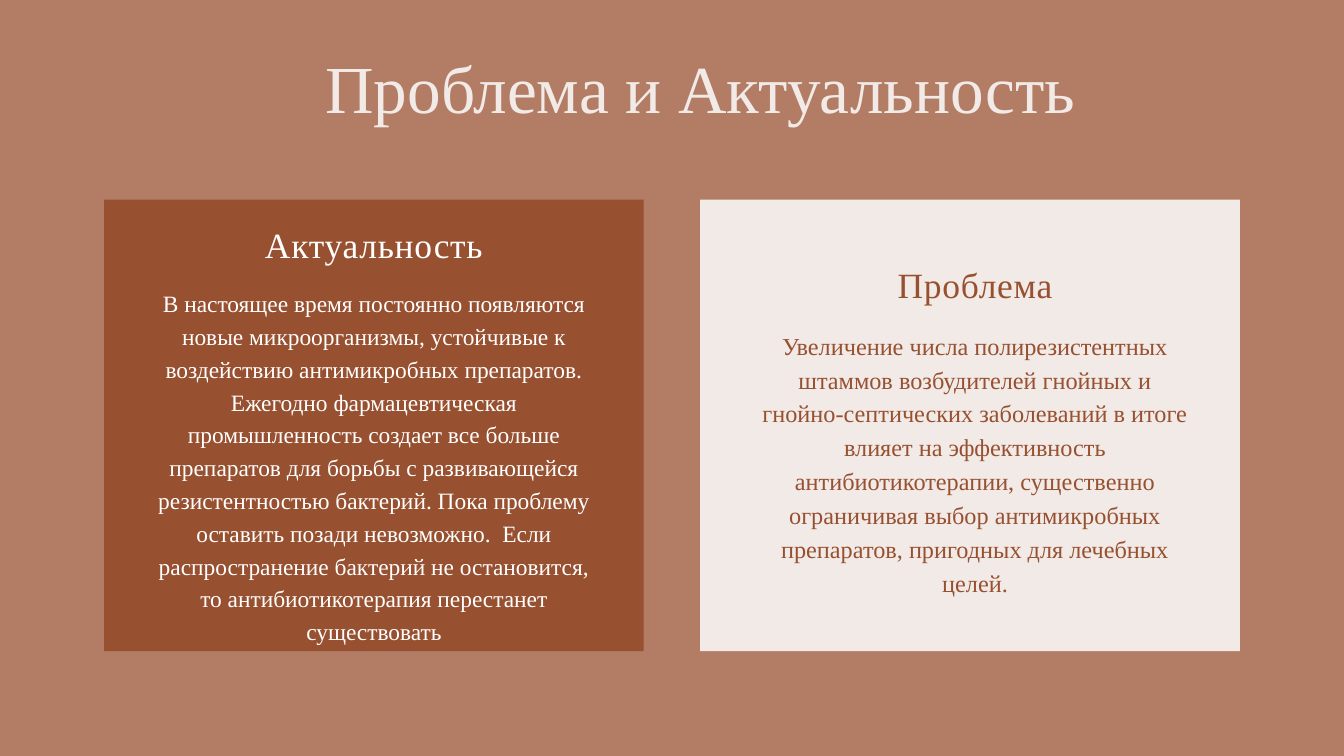
from dataclasses import dataclass

from pptx import Presentation
from pptx.dml.color import RGBColor
from pptx.enum.shapes import MSO_SHAPE as Shape
from pptx.enum.text import MSO_ANCHOR as Anchor, MSO_AUTO_SIZE as AutoSize, PP_ALIGN as Align
from pptx.slide import Slide
from pptx.text.text import TextFrame
from pptx.util import Inches, Pt

COLORS = {
    "background": "B37D65",
    "brown": "975030",
    "cream": "F2EAE7",
    "white": "FFFFFF",
}
FONT = "Times New Roman"
CARD_TOP, CARD_WIDTH, CARD_HEIGHT = 2.97, 8.03, 6.72
HEADING_SIZE, HEADING_HEIGHT, HEADING_TRACKING = 38, 0.69, 0.8
FRAME_FORMAT = {
    "margin_left": 0,
    "margin_top": 0,
    "margin_right": 0,
    "margin_bottom": 0,
    "word_wrap": True,
    "auto_size": AutoSize.SHAPE_TO_FIT_TEXT,
    "vertical_anchor": Anchor.TOP,
}


@dataclass
class Card:
    left: float
    fill: str
    text_color: str
    text_left: float
    text_width: float
    heading: str
    heading_top: float
    body: str
    body_top: float
    body_height: float
    body_size: float


CARDS = [
    Card(
        1.55, "brown", "white", 2.34, 6.45,
        "Актуальность", 3.21,
        "В настоящее время постоянно появляются новые микроорганизмы, устойчивые к "
        "воздействию антимикробных препаратов. Ежегодно фармацевтическая промышленность "
        "создает все больше препаратов для борьбы с развивающейся резистентностью "
        "бактерий. Пока проблему оставить позади невозможно.  Если распространение "
        "бактерий не остановится, то антибиотикотерапия перестанет существовать",
        4.24, 5.16, 25.1,
    ),
    Card(
        10.42, "cream", "brown", 11.34, 6.34,
        "Проблема", 3.81,
        "Увеличение числа полирезистентных штаммов возбудителей гнойных и "
        "гнойно-септических заболеваний в итоге влияет на эффективность "
        "антибиотикотерапии, существенно ограничивая выбор антимикробных препаратов, "
        "пригодных для лечебных целей.",
        4.85, 3.52, 26,
    ),
]


def rgb(name: str) -> RGBColor:
    return RGBColor.from_string(COLORS[name])


def write(frame: TextFrame, text: str, size: float, color: str,
          leading: float = 1.4, tracking: float = 0) -> None:
    """Fill a frame with one centred paragraph; leading is a multiple of size."""
    for attribute, value in FRAME_FORMAT.items():
        setattr(frame, attribute, value)
    paragraph = frame.paragraphs[0]
    paragraph.alignment = Align.CENTER
    paragraph.line_spacing = Pt(round(size * leading, 1))
    run = paragraph.add_run()
    run.text = text
    for attribute, value in {"name": FONT, "size": Pt(size)}.items():
        setattr(run.font, attribute, value)
    run.font.color.rgb = rgb(color)
    if tracking:
        run.font._element.set("spc", str(round(tracking * 100)))


def add_title(slide: Slide, text: str) -> None:
    title = slide.shapes.title
    place = {"left": 3.17, "top": 0.59, "width": 14.51, "height": 1.46}
    for attribute, value in place.items():
        setattr(title, attribute, Inches(value))
    write(title.text_frame, text, 72, "cream", leading=1.3)


def add_card(slide: Slide, card: Card) -> None:
    # Panel
    panel = slide.shapes.add_shape(
        Shape.RECTANGLE, Inches(card.left), Inches(CARD_TOP),
        Inches(CARD_WIDTH), Inches(CARD_HEIGHT))
    panel.shadow.inherit = False
    panel.fill.solid()
    panel.fill.fore_color.rgb = rgb(card.fill)
    panel.line.fill.background()

    # Body and heading share the same column
    left, width = Inches(card.text_left), Inches(card.text_width)
    body = slide.shapes.add_textbox(
        left, Inches(card.body_top), width, Inches(card.body_height))
    write(body.text_frame, card.body, card.body_size, card.text_color)
    heading = slide.shapes.add_textbox(
        left, Inches(card.heading_top), width, Inches(HEADING_HEIGHT))
    write(heading.text_frame, card.heading, HEADING_SIZE, card.text_color,
          tracking=HEADING_TRACKING)


def main() -> None:
    deck = Presentation()
    deck.slide_width, deck.slide_height = Inches(20), Inches(11.25)
    slide = deck.slides.add_slide(deck.slide_layouts[5])  # title only
    slide.background.fill.solid()
    slide.background.fill.fore_color.rgb = rgb("background")

    add_title(slide, "Проблема и Актуальность")
    for card in CARDS:
        add_card(slide, card)
    deck.save("out.pptx")


if __name__ == "__main__":
    main()
